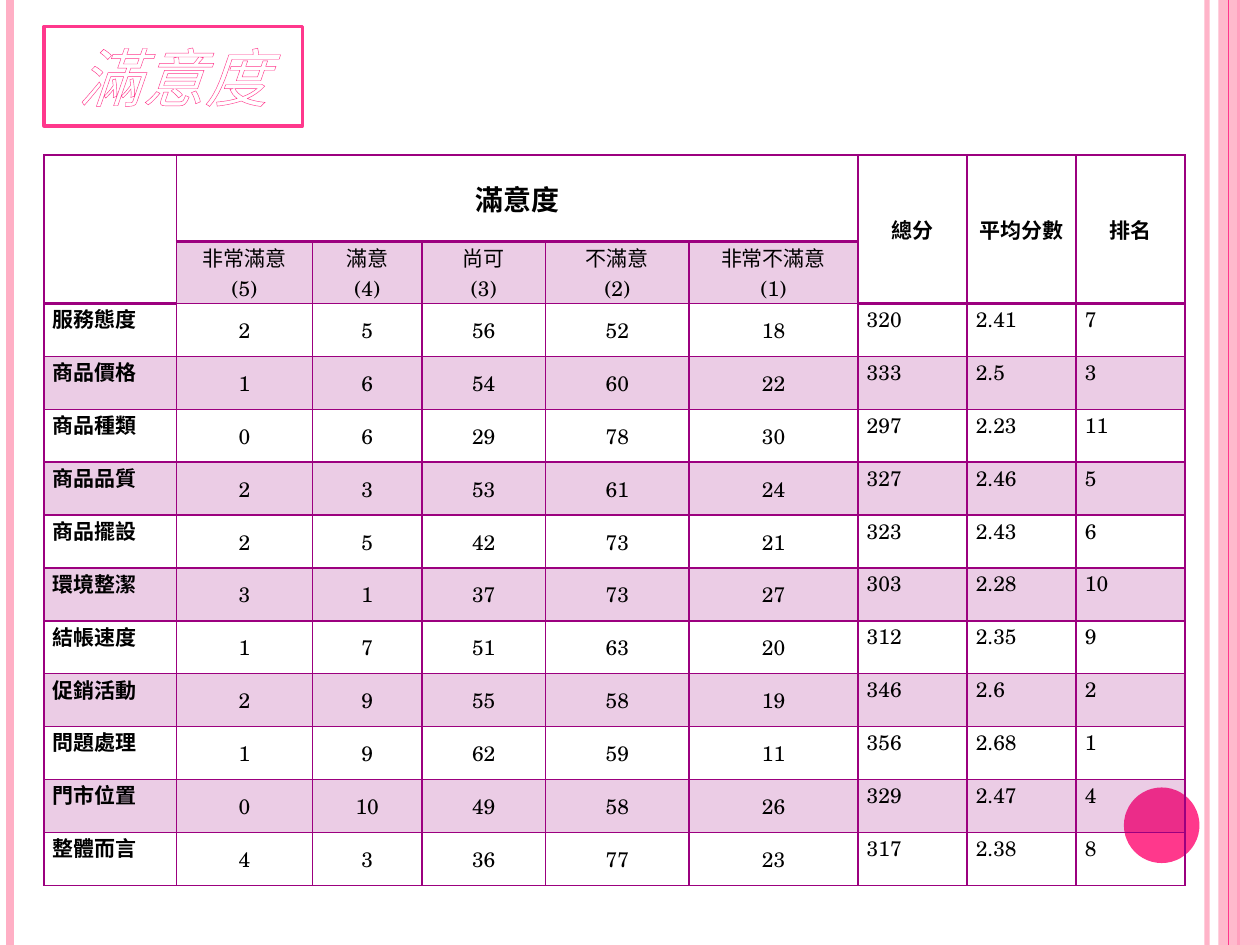
from dataclasses import dataclass
from pptx import Presentation, util as u
from pptx.dml.color import RGBColor
from pptx.enum import shapes, text
from pptx.oxml import ns, xmlchemy as xc


@dataclass(frozen=True)
class Theme:
    pink: str = "FF388C"
    pale: str = "FFAFC5"
    plum: str = "9C007F"
    ink: str = "000000"
    white: str = "FFFFFF"
    band: int = 20
    title: int = 36
    head: int = 16
    body: int = 12
    latin: str = "TeX Gyre Schola"
    asian: str = "Noto Sans CJK SC"


COLS, ROWS = 100, 75
MID, TOP = text.MSO_ANCHOR.MIDDLE, text.MSO_ANCHOR.TOP
CENTER, LEFT = text.PP_ALIGN.CENTER, text.PP_ALIGN.LEFT


def add(node, tag, **attrs):
    child = xc.OxmlElement(tag)
    for key, val in attrs.items():
        child.set(key, str(val))
    node.append(child)
    return child


def assign(item, values):
    for key, val in values.items():
        setattr(item, key, val)


def fade(node, share):
    if share < 100:
        color = next(node.iter(ns.qn("a:srgbClr")))
        add(color, "a:alpha", val=share * 1000)


def stroke(tag, color, width):
    line = xc.OxmlElement(tag)
    line.set("w", str(int(u.Pt(width))))
    add(add(line, "a:solidFill"), "a:srgbClr", val=color)
    return line


class Deck:
    def __init__(self, theme):
        self.theme = theme
        self.show = Presentation()
        assign(self.show, {"slide_width": u.Inches(10),
                           "slide_height": u.Inches(7.5)})
        self.slide = self.show.slides.add_slide(self.show.slide_layouts[6])
        self.draw = self.slide.shapes

    def x(self, col):
        return round(self.show.slide_width * col / COLS)

    def y(self, row):
        return round(self.show.slide_height * row / ROWS)

    def box(self, left, top, wide, high):
        return self.x(left), self.y(top), self.x(wide), self.y(high)

    def rule(self, col, color, width, share=100):
        line = self.draw.add_connector(shapes.MSO_CONNECTOR.STRAIGHT,
                                       self.x(col), 0, self.x(col), self.y(ROWS))
        line.line.color.rgb = RGBColor.from_string(color)
        line.line.width = u.Pt(width)
        fade(line._element.spPr, share)
        add(line._element.spPr, "a:effectLst")

    def shape(self, kind, place, color, edge=None, share=100):
        item = self.draw.add_shape(kind, *self.box(*place))
        item.shadow.inherit = False
        item.fill.solid()
        item.fill.fore_color.rgb = RGBColor.from_string(color)
        fade(item._element.spPr, share)
        if edge:
            item.line.color.rgb = RGBColor.from_string(edge)
            item.line.width = u.Pt(2)
        else:
            item.line.fill.background()
        return item

    def label(self, frame, words, size, color, latin, align, **style):
        for num, part in enumerate(words.split("\n")):
            para = frame.add_paragraph() if num else frame.paragraphs[0]
            para.alignment = align
            run = para.add_run()
            run.text = part
            assign(run.font, {"size": u.Pt(size), "name": latin, **style})
            run.font.color.rgb = RGBColor.from_string(color)
            add(run._r.get_or_add_rPr(), "a:ea", typeface=self.theme.asian)

    def title(self, words, place):
        look = self.theme
        item = self.shape(shapes.MSO_SHAPE.RECTANGLE, place, look.white, look.pink)
        item.text_frame.vertical_anchor = MID
        self.label(item.text_frame, words, look.title, look.white, look.asian,
                   CENTER, italic=True)
        run = item.text_frame.paragraphs[0].runs[0]
        run._r.get_or_add_rPr().insert(0, stroke("a:ln", look.pink, 0.8))

    def cell(self, cell, words, shade, edges, anchor=TOP, align=LEFT,
             size=None, bold=False):
        look = self.theme
        assign(cell, {"margin_left": self.x(0.7), "margin_right": self.x(0.7),
                      "margin_top": 0, "margin_bottom": 0,
                      "vertical_anchor": anchor})
        if words:
            self.label(cell.text_frame, words, size or look.body, look.ink,
                       look.latin, align, bold=bold)
        props = cell._tc.get_or_add_tcPr()
        if shade:
            cell.fill.solid()
            cell.fill.fore_color.rgb = RGBColor.from_string(look.plum)
            fade(props, look.band)
        else:
            cell.fill.background()
        for num, (side, width) in enumerate(edges.items()):
            props.insert(num, stroke("a:ln" + side, look.plum, width))

    def table(self, grid, left, top, wides, highs, spans):
        place = self.box(left, top, sum(wides), sum(highs))
        table = self.draw.add_table(len(highs), len(wides), *place).table
        assign(table, {"first_row": False, "horz_banding": False})
        for col, wide in zip(table.columns, wides):
            col.width = self.x(wide)
        for row, high in zip(table.rows, highs):
            row.height = self.y(high)
        for first, last in spans:
            table.cell(*first).merge(table.cell(*last))
        scale = range(1, 6)

        def under(row, col):
            return 2 if row == 0 or row == 1 and col not in scale else 1

        for row, line in enumerate(grid):
            for col, words in enumerate(line):
                edges = {"L": 1, "R": 1, "T": under(row - 1, col),
                         "B": under(row, col)}
                mid = row == 0 or row > 1 and col in scale
                style = {"anchor": MID if mid else TOP,
                         "align": CENTER if row < 2 or col in scale else LEFT,
                         "bold": row == 0 or col == 0}
                if row == 0 and col == 1:
                    style["size"] = self.theme.head
                shade = row % 2 == 1 and (row > 1 or col in scale)
                self.cell(table.cell(row, col), words, shade, edges, **style)


HEAD = [["", "滿意度", "", "", "", "", "總分", "平均分數", "排名"],
        ["", "非常滿意\n(5)", "滿意\n(4)", "尚可\n(3)", "不滿意\n(2)",
         "非常不滿意\n(1)", "", "", ""]]
SCORES = """服務態度 2 5 56 52 18 320 2.41 7
商品價格 1 6 54 60 22 333 2.5 3
商品種類 0 6 29 78 30 297 2.23 11
商品品質 2 3 53 61 24 327 2.46 5
商品擺設 2 5 42 73 21 323 2.43 6
環境整潔 3 1 37 73 27 303 2.28 10
結帳速度 1 7 51 63 20 312 2.35 9
促銷活動 2 9 55 58 19 346 2.6 2
問題處理 1 9 62 59 11 356 2.68 1
門市位置 0 10 49 58 26 329 2.47 4
整體而言 4 3 36 77 23 317 2.38 8"""


def main():
    look = Theme()
    deck = Deck(look)
    deck.rule(95.8, look.pale, 3, 93)
    deck.rule(0.8, look.pale, 4.5)
    deck.rule(98.3, look.pink, 1.5)
    deck.shape(shapes.MSO_SHAPE.RECTANGLE, (96.7, 0, 3.3, ROWS), look.pale, share=87)
    deck.rule(97.5, look.pink, 0.75)
    deck.shape(shapes.MSO_SHAPE.OVAL, (89.2, 62.5, 6, 6), look.pink)
    deck.title("滿意度", (3.5, 2.1, 20.5, 7.9))
    rows = [line.split() for line in SCORES.splitlines()]
    spans = [((0, col), (1, col)) for col in (0, 6, 7, 8)] + [((0, 1), (0, 5))]
    deck.table(HEAD + rows, 3.5, 12.3,
               [10.5, 10.8, 8.7, 9.8, 11.4, 13.4] + [8.66] * 3,
               [6.9, 4.9] + [4.2] * len(rows), spans)
    deck.show.save("out.pptx")


if __name__ == "__main__":
    main()
